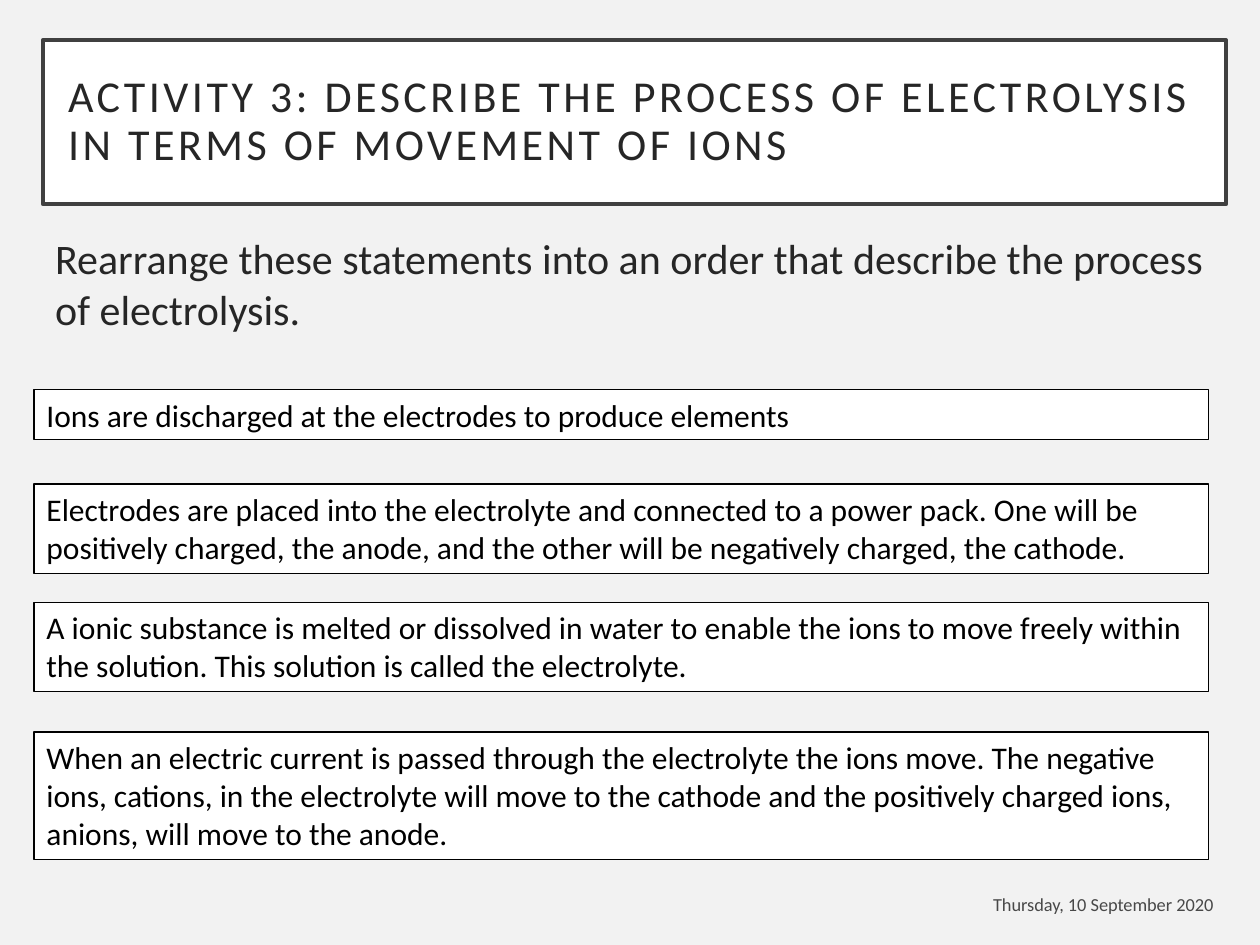
import pptx
import pptx.dml.color
import pptx.enum.text
import pptx.util
from lxml import etree
from pptx.oxml.ns import qn

BACKGROUND = pptx.dml.color.RGBColor(0xF2, 0xF2, 0xF2)
WHITE = pptx.dml.color.RGBColor(0xFF, 0xFF, 0xFF)
BLACK = pptx.dml.color.RGBColor(0x00, 0x00, 0x00)
FRAME = pptx.dml.color.RGBColor(0x40, 0x40, 0x40)
INK = pptx.dml.color.RGBColor(0x26, 0x26, 0x26)

FONT = "Calibri"
SLIDE_WIDTH = pptx.util.Inches(10)
SLIDE_HEIGHT = pptx.util.Inches(7.5)
COLUMN = SLIDE_WIDTH / 100
ROW = SLIDE_HEIGHT / 75

HEADING_BOX = (3.4, 3.2, 93.9, 13)
INSTRUCTION_BOX = (3.4, 18, 94, 10)
DATE_BOX = (74.7, 70, 22.6, 3.5)
STATEMENTS_BOX = (2.7, 30.9, 93.2, 37.3)

HEADING = "ACTIVITY 3: DESCRIBE THE PROCESS OF ELECTROLYSIS IN TERMS OF MOVEMENT OF IONS"
INSTRUCTION = "Rearrange these statements into an order that describe the process of electrolysis."
DATE = "Thursday, 10 September 2020"
STATEMENTS = [
    (0, 4, "Ions are discharged at the electrodes to produce elements"),
    (7.5, 7.1, "Electrodes are placed into the electrolyte and connected to a power pack. "
               "One will be positively charged, the anode, and the other will be negatively "
               "charged, the cathode."),
    (16.9, 7.1, "A ionic substance is melted or dissolved in water to enable the ions to move "
                "freely within the solution. This solution is called the electrolyte."),
    (27.2, 10.1, "When an electric current is passed through the electrolyte the ions move. "
                 "The negative ions, cations, in the electrolyte will move to the cathode and "
                 "the positively charged ions, anions, will move to the anode."),
]


def add_text(slide, box, text, size, color):
    """Place wrapped text in a box given in columns and rows."""
    left, top, width, height = box
    panel = slide.shapes.add_textbox(
        round(left * COLUMN), round(top * ROW), round(width * COLUMN), round(height * ROW))
    panel.text_frame.word_wrap = True
    panel.text_frame.text = text
    font = panel.text_frame.paragraphs[0].runs[0].font
    font.name = FONT
    font.size = pptx.util.Pt(size)
    font.color.rgb = color
    return panel


def outline(panel, color, weight):
    """Give a panel a white fill and a solid border."""
    panel.fill.solid()
    panel.fill.fore_color.rgb = WHITE
    panel.line.color.rgb = color
    panel.line.width = pptx.util.Pt(weight)


def add_heading(slide, box):
    """Place the framed, letter-spaced heading."""
    heading = add_text(slide, box, HEADING, 25.2, INK)
    outline(heading, FRAME, 2.5)
    frame = heading.text_frame
    frame.vertical_anchor = pptx.enum.text.MSO_ANCHOR.MIDDLE
    frame.margin_left = frame.margin_right = pptx.util.Inches(0.2)
    frame.margin_top = frame.margin_bottom = pptx.util.Inches(0.2)
    wording = frame.paragraphs[0]
    wording.line_spacing = 0.9
    wording.runs[0].font._element.set("spc", "200")


def add_instruction(slide, box):
    """Place the task instruction."""
    add_text(slide, box, INSTRUCTION, 24, INK)


def add_statements(slide, box):
    """Place the bordered statements at their rows within the box."""
    left, top, width, _ = box
    for offset, height, wording in STATEMENTS:
        statement = add_text(slide, (left, top + offset, width, height), wording, 18, BLACK)
        outline(statement, BLACK, 0.75)
        statement.text_frame.auto_size = pptx.enum.text.MSO_AUTO_SIZE.SHAPE_TO_FIT_TEXT


def add_date(slide, box):
    """Place the right-aligned, partly transparent date."""
    date = add_text(slide, box, DATE, 10.5, BLACK)
    date.text_frame.vertical_anchor = pptx.enum.text.MSO_ANCHOR.MIDDLE
    wording = date.text_frame.paragraphs[0]
    wording.alignment = pptx.enum.text.PP_ALIGN.RIGHT
    for color in wording.runs[0].font._element.iter(qn("a:srgbClr")):
        etree.SubElement(color, qn("a:alpha")).set("val", "70000")


def main():
    """Build and save the activity slide."""
    deck = pptx.Presentation()
    deck.slide_width = SLIDE_WIDTH
    deck.slide_height = SLIDE_HEIGHT
    slide = deck.slides.add_slide(deck.slide_layouts[6])
    slide.background.fill.solid()
    slide.background.fill.fore_color.rgb = BACKGROUND
    add_heading(slide, HEADING_BOX)
    add_instruction(slide, INSTRUCTION_BOX)
    add_statements(slide, STATEMENTS_BOX)
    add_date(slide, DATE_BOX)
    deck.save("out.pptx")


if __name__ == "__main__":
    main()
